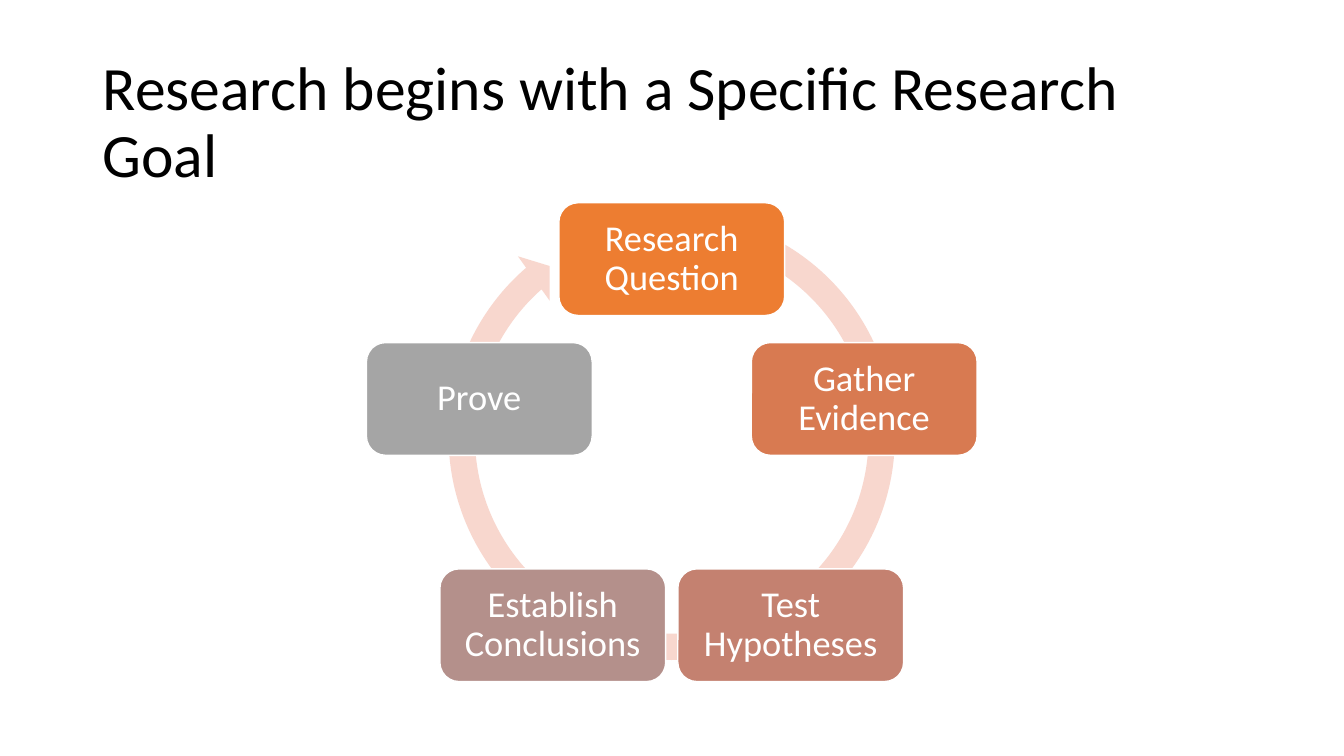
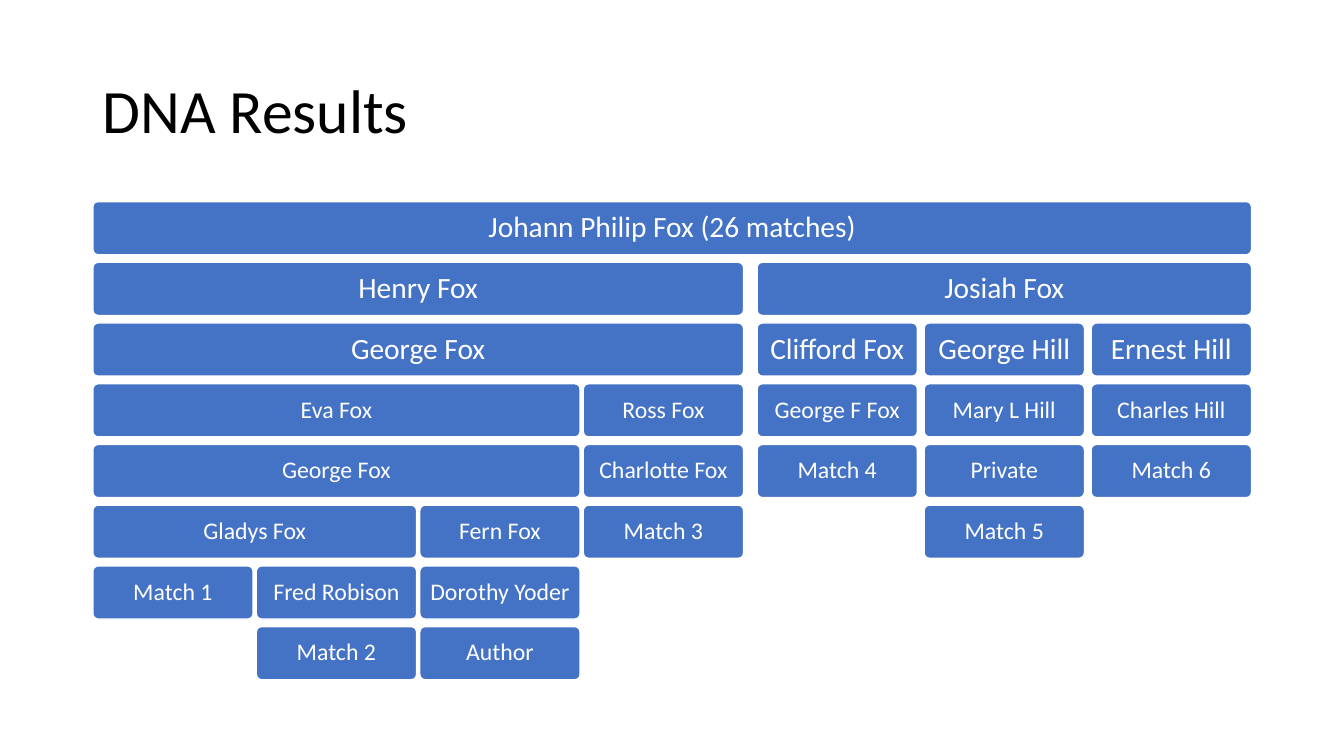
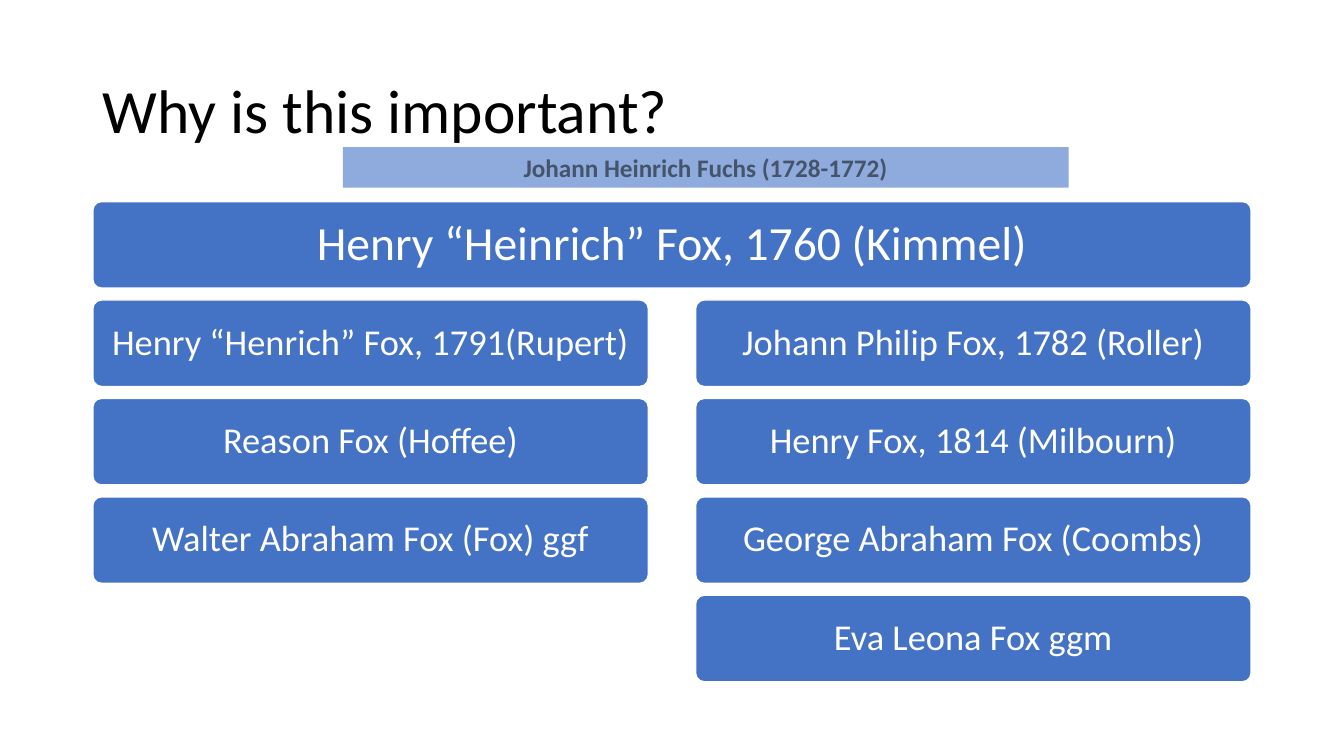
"""Build three slides on a research cycle and a family's DNA matches."""
import math

import pptx
import pptx.dml.color
import pptx.enum.shapes
import pptx.enum.text
import pptx.util

Cm = pptx.util.Cm
SHAPE = pptx.enum.shapes.MSO_SHAPE
ALIGN = pptx.enum.text.PP_ALIGN
COLORS = {
    "text": "000000", "white": "FFFFFF", "blue": "4472C4", "pale_blue": "8FAADC",
    "slate": "44546A", "ring": "F8D7CE", "orange": "ED7D31", "copper": "D87A51",
    "clay": "C48170", "mauve": "B4908B", "grey": "A5A5A5",
}
FONT = "Calibri"
LEFT, TOP = 2.34, 5.08

CYCLE = [
    ("Research Question", "orange"),
    ("Gather Evidence", "copper"),
    ("Test Hypotheses", "clay"),
    ("Establish Conclusions", "mauve"),
    ("Prove", "grey"),
]
RING_ADJUST = (0.05544, 3.3068, 137.364, 174.101, 0.05757)

DNA_TREE = ("Johann Philip Fox (26 matches)", [
    ("Henry Fox", [
        ("George Fox", [
            ("Eva Fox", [
                ("George Fox", [
                    ("Gladys Fox", [
                        ("Match 1", []),
                        ("Fred Robison", [("Match 2", [])]),
                    ]),
                    ("Fern Fox", [("Dorothy Yoder", [("Author", [])])]),
                ]),
            ]),
            ("Ross Fox", [("Charlotte Fox", [("Match 3", [])])]),
        ]),
    ]),
    ("Josiah Fox", [
        ("Clifford Fox", [("George F Fox", [("Match 4", [])])]),
        ("George Hill", [("Mary L Hill", [("Private", [("Match 5", [])])])]),
        ("Ernest Hill", [("Charles Hill", [("Match 6", [])])]),
    ]),
])
DNA_STYLE = {"leaf": 4.04, "height": 1.34, "pitch": 1.53,
             "gaps": (0.34, 0.17, 0.08), "sizes": (21, 21, 21, 17)}

LINE_TREE = ("Henry “Heinrich” Fox, 1760 (Kimmel)", [
    ("Henry “Henrich” Fox, 1791(Rupert)", [
        ("Reason Fox (Hoffee)", [("Walter Abraham Fox (Fox) ggf", [])]),
    ]),
    ("Johann Philip Fox, 1782 (Roller)", [
        ("Henry Fox, 1814 (Milbourn)", [
            ("George Abraham Fox (Coombs)", [("Eva Leona Fox ggm", [])]),
        ]),
    ]),
])
LINE_STYLE = {"leaf": 14, "height": 2.18, "pitch": 2.48,
              "gaps": (1.19,), "sizes": (34, 26)}


def rgb(name):
    return pptx.dml.color.RGBColor.from_string(COLORS[name])


def at_depth(values, depth):
    return values[min(depth, len(values) - 1)]


def write(sp, text, size=18, color="white", bold=False, align=ALIGN.CENTER,
          inset=0.25, spacing=0.9):
    tf = sp.text_frame
    tf.word_wrap = True
    tf.vertical_anchor = pptx.enum.text.MSO_ANCHOR.MIDDLE
    tf.margin_left = tf.margin_right = Cm(inset)
    tf.margin_top = tf.margin_bottom = Cm(min(inset, 0.13))
    p = tf.paragraphs[0]
    p.alignment = align
    p.line_spacing = spacing
    r = p.add_run()
    r.text = text
    r.font.name = FONT
    r.font.size = pptx.util.Pt(size)
    r.font.bold = bold
    r.font.color.rgb = rgb(color)


def add_shape(s, kind, x, y, w, h, fill, outlined=False):
    sp = s.shapes.add_shape(kind, Cm(x), Cm(y), Cm(w), Cm(h))
    sp.shadow.inherit = False
    sp.fill.solid()
    sp.fill.fore_color.rgb = rgb(fill)
    if outlined:
        sp.line.color.rgb = rgb("white")
        sp.line.width = pptx.util.Pt(1)
    else:
        sp.line.fill.background()
    return sp


def add_box(s, text, x, y, w, h, size, fill="blue", corner=0.1):
    sp = add_shape(s, SHAPE.ROUNDED_RECTANGLE, x, y, w, h, fill, outlined=True)
    sp.adjustments[0] = corner
    write(sp, text, size=size, inset=0.04 + 0.01 * size)


def add_slide(prs, title, y=1.02, h=3.68):
    s = prs.slides.add_slide(prs.slide_layouts[6])
    sp = s.shapes.add_textbox(Cm(LEFT), Cm(y), Cm(29.21), Cm(h))
    write(sp, title, size=44, color="text", align=ALIGN.LEFT)
    return s


def add_cycle(s):
    ring = add_shape(s, SHAPE.CIRCULAR_ARROW, 10.95, 5.03, 11.96, 11.96, "ring")
    for i, value in enumerate(RING_ADJUST):
        ring.adjustments[i] = value
    cx, cy, radius, w, h = 16.93, 11.63, 5.1, 5.69, 2.84
    for i, (text, fill) in enumerate(CYCLE):
        angle = 2 * math.pi * i / len(CYCLE)
        x = cx + radius * math.sin(angle) - w / 2
        y = cy - radius * math.cos(angle) - h / 2
        add_box(s, text, x, y, w, h, 26, fill, corner=0.17)


def tree_width(children, style, depth):
    if not children:
        return style["leaf"]
    gaps = at_depth(style["gaps"], depth) * (len(children) - 1)
    return gaps + sum(tree_width(c, style, depth + 1) for _, c in children)


def add_tree(s, node, style, x=LEFT, depth=0):
    text, children = node
    width = tree_width(children, style, depth)
    add_box(s, text, x, TOP + depth * style["pitch"], width, style["height"],
            at_depth(style["sizes"], depth))
    child_x = x
    for child in children:
        child_x += add_tree(s, child, style, child_x, depth + 1)
        child_x += at_depth(style["gaps"], depth)
    return width


def main():
    prs = pptx.Presentation()
    prs.slide_width, prs.slide_height = Cm(33.87), Cm(19.05)
    s = add_slide(prs, "Research begins with a Specific Research Goal", y=1.55, h=3.15)
    add_cycle(s)
    s = add_slide(prs, "DNA Results")
    add_tree(s, DNA_TREE, DNA_STYLE)
    s = add_slide(prs, "Why is this important?")
    add_tree(s, LINE_TREE, LINE_STYLE)
    ancestor = add_shape(s, SHAPE.RECTANGLE, 8.64, 3.71, 18.29, 1.02, "pale_blue")
    write(ancestor, "Johann Heinrich Fuchs (1728-1772)", color="slate", bold=True, spacing=1.0)
    prs.save("out.pptx")


if __name__ == "__main__":
    main()
